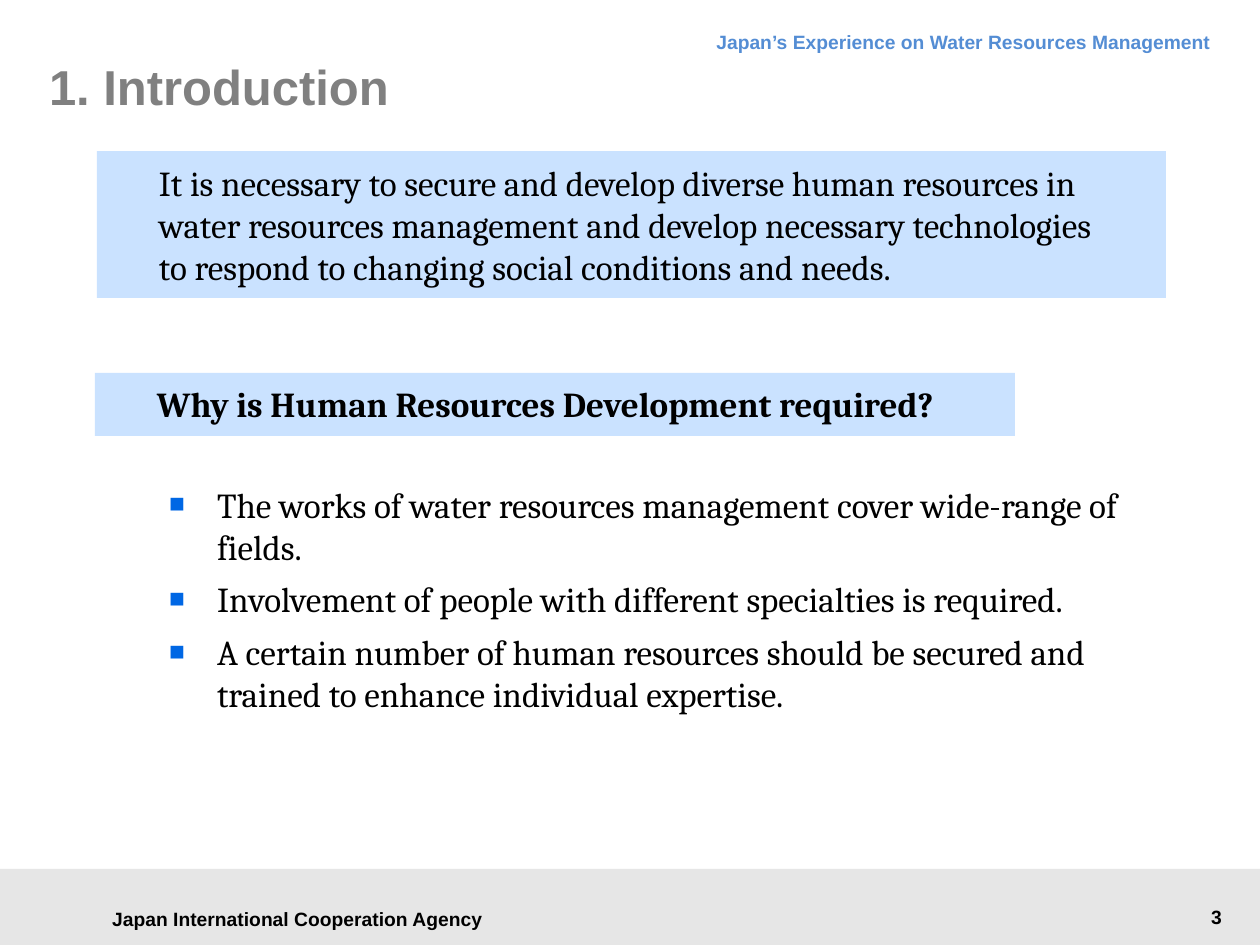
import dataclasses

import lxml.etree
import pptx
import pptx.dml.color
import pptx.enum.shapes
import pptx.enum.text
import pptx.oxml.ns
import pptx.util

PIXELS_PER_INCH = 126
PAGE_WIDTH, PAGE_HEIGHT = 1260, 945
ALIGN = pptx.enum.text.PP_ALIGN
ANCHOR = pptx.enum.text.MSO_ANCHOR


@dataclasses.dataclass(frozen=True)
class Theme:
    heading_font: str = "Arial"
    body_font: str = "Cambria"
    title_size: int = 28
    body_size: int = 20
    small_size: int = 11
    ink: str = "000000"
    title: str = "808080"
    header: str = "548DD4"
    panel: str = "CAE2FF"
    footer: str = "E6E6E6"
    bullet: str = "0067E4"


THEME = Theme()


def px(length):
    return pptx.util.Emu(round(length * 914400 / PIXELS_PER_INCH))


def rgb(value):
    return pptx.dml.color.RGBColor.from_string(value)


def place(shape, box):
    shape.left, shape.top, shape.width, shape.height = map(px, box)


def set_frame(shape, anchor, margins):
    """Set wrapping, anchor and the left, top, right and bottom margins."""
    frame = shape.text_frame
    frame.word_wrap = True
    frame.auto_size = pptx.enum.text.MSO_AUTO_SIZE.NONE
    frame.vertical_anchor = anchor
    (frame.margin_left, frame.margin_top,
     frame.margin_right, frame.margin_bottom) = map(px, margins)
    return frame


def style_paragraph(para, font, size, color, bold=False, align=ALIGN.LEFT):
    para.alignment = align
    para.space_before = pptx.util.Pt(0)
    for span in para.runs:
        span.font.name = font
        span.font.size = pptx.util.Pt(size)
        span.font.bold = bold
        span.font.color.rgb = rgb(color)


def set_indent(para, left, first_line=0):
    properties = para._p.get_or_add_pPr()
    properties.set("marL", str(px(left)))
    properties.set("indent", str(px(first_line)))
    return properties


def add_square_bullet(para):
    properties = set_indent(para, 48, -48)
    qn = pptx.oxml.ns.qn
    color = lxml.etree.SubElement(properties, qn("a:buClr"))
    lxml.etree.SubElement(color, qn("a:srgbClr"), val=THEME.bullet)
    lxml.etree.SubElement(properties, qn("a:buSzPct"), val="75000")
    lxml.etree.SubElement(properties, qn("a:buFont"), typeface=THEME.heading_font)
    lxml.etree.SubElement(properties, qn("a:buChar"), char="■")


def add_rectangle(page, box, color):
    shape = page.shapes.add_shape(
        pptx.enum.shapes.MSO_SHAPE.RECTANGLE, *map(px, box))
    shape.shadow.inherit = False
    shape.fill.solid()
    shape.fill.fore_color.rgb = rgb(color)
    shape.line.fill.background()
    return shape


def add_small_text(page, box, text, color, align, anchor=ANCHOR.TOP):
    shape = page.shapes.add_textbox(*map(px, box))
    frame = set_frame(shape, anchor, (13, 6, 13, 6))
    frame.text = text
    para = frame.paragraphs[0]
    style_paragraph(para, THEME.heading_font, THEME.small_size, color, True, align)
    return para


def add_header(page, box, text):
    para = add_small_text(page, box, text, THEME.header, ALIGN.RIGHT)
    para.line_spacing = pptx.util.Pt(18)


def add_footer(page, box, owner, number):
    left, top, width, height = box
    add_rectangle(page, box, THEME.footer)
    add_small_text(page, (left + 89, top + 28, 417, 43), owner,
                   THEME.ink, ALIGN.CENTER, ANCHOR.MIDDLE)
    add_small_text(page, (left + width - 223, top + 30, 198, 37), number,
                   THEME.ink, ALIGN.RIGHT)


def fill_title(page, box, text):
    title = page.shapes.title
    place(title, box)
    frame = set_frame(title, ANCHOR.MIDDLE, (0, 0, 0, 0))
    frame.text = text
    style_paragraph(frame.paragraphs[0], THEME.heading_font,
                    THEME.title_size, THEME.title, True)


def add_panel(page, box, text, bold=False):
    shape = add_rectangle(page, box, THEME.panel)
    frame = set_frame(shape, ANCHOR.TOP, (54, 10, 44, 10))
    frame.text = text
    para = frame.paragraphs[0]
    set_indent(para, 8)
    style_paragraph(para, THEME.body_font, THEME.body_size, THEME.ink, bold)


def fill_reasons(page, box, reasons):
    body = page.placeholders[1]
    place(body, box)
    frame = set_frame(body, ANCHOR.TOP, (54, 10, 0, 10))
    frame.text = "\n".join(reasons)
    for para in frame.paragraphs:
        add_square_bullet(para)
        style_paragraph(para, THEME.body_font, THEME.body_size, THEME.ink)
        para.space_after = pptx.util.Pt(6)


def build_introduction(deck):
    page = deck.slides.add_slide(deck.slide_layouts[1])
    add_header(page, (343, 16, 881, 48),
               "Japan’s Experience on Water Resources Management")
    fill_title(page, (49, 36, 377, 99), "1. Introduction")
    add_panel(page, (97, 151, 1069, 147),
              "It is necessary to secure and develop diverse human resources in "
              "water resources management and develop necessary technologies to "
              "respond to changing social conditions and needs.")
    add_panel(page, (95, 373, 920, 63),
              "Why is Human Resources Development required?", bold=True)
    fill_reasons(page, (115, 473, 1052, 253), [
        "The works of water resources management cover wide-range of fields.",
        "Involvement of people with different specialties is required.",
        "A certain number of human resources should be secured and trained "
        "to enhance individual expertise.",
    ])
    add_footer(page, (0, 869, PAGE_WIDTH, PAGE_HEIGHT - 869),
               "Japan International Cooperation Agency", "3")


def main():
    deck = pptx.Presentation()
    deck.slide_width, deck.slide_height = px(PAGE_WIDTH), px(PAGE_HEIGHT)
    build_introduction(deck)
    deck.save("out.pptx")


if __name__ == "__main__":
    main()
